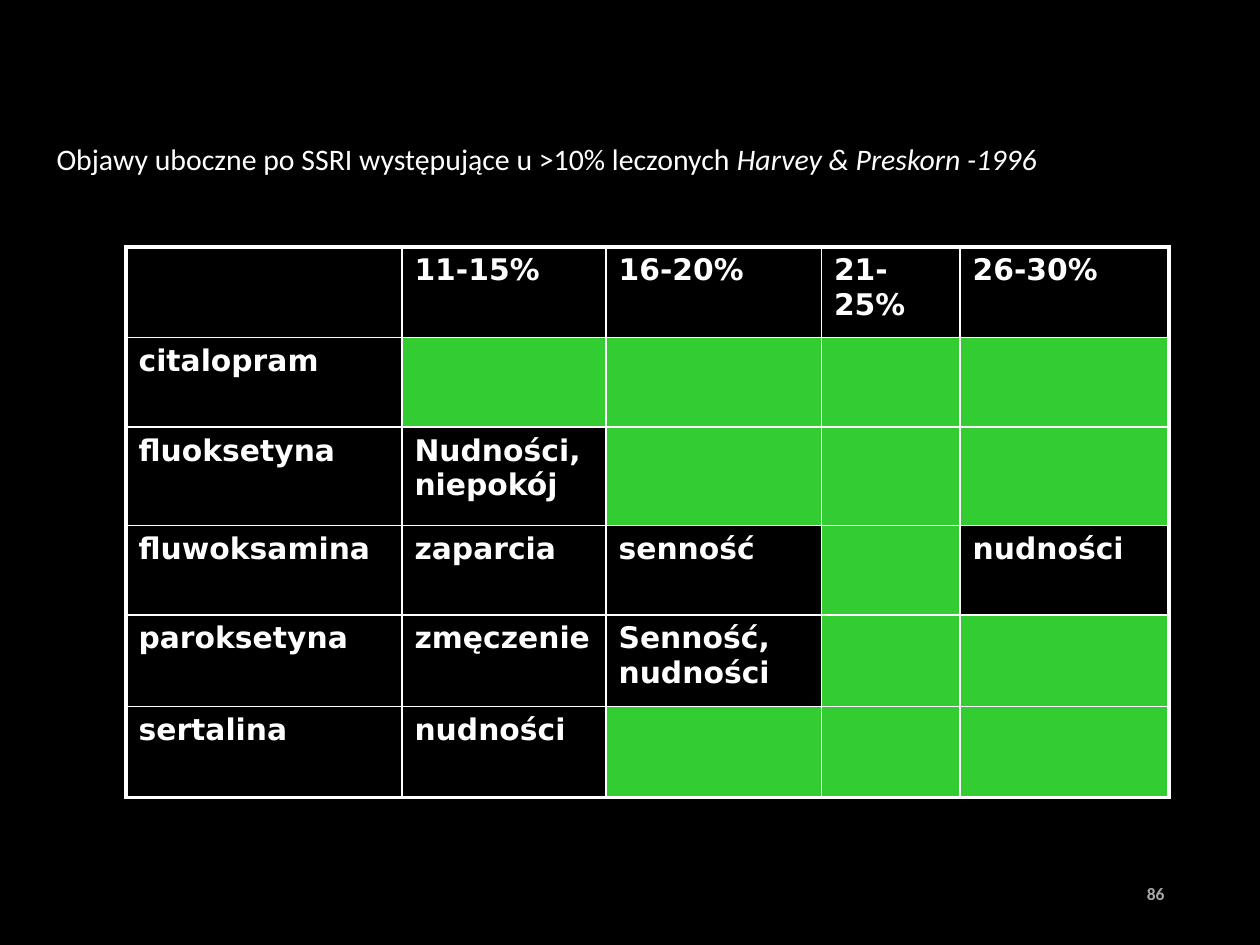
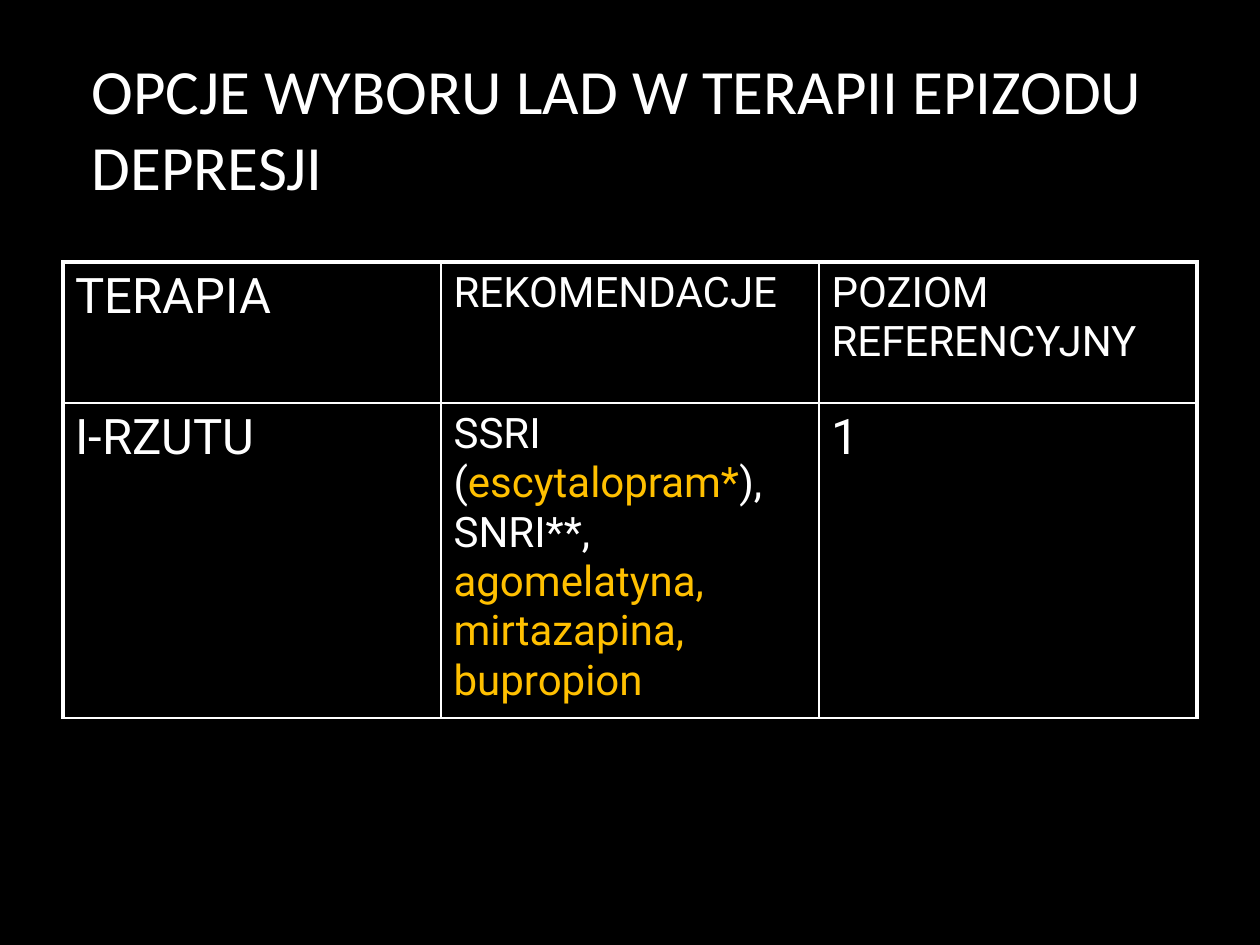
import pptx
import pptx.dml.color
import pptx.enum.text
import pptx.util
from dataclasses import dataclass
from lxml import etree
from pptx.oxml.ns import qn

Inches = pptx.util.Inches
Pt = pptx.util.Pt


@dataclass(frozen=True)
class Theme:
    background: str = "000000"
    text: str = "FFFFFF"
    accent: str = "FFC000"
    empty_cell: str = "33CC33"
    title_font: str = "Calibri"
    symptom_font: str = "DejaVu Sans"
    therapy_font: str = "Roboto"
    small: int = 10
    body: int = 17
    medium: int = 24
    large: int = 28
    heading: int = 36
    outer_line: float = 2.25
    inner_line: float = 1


THEME = Theme()
ANCHOR = pptx.enum.text.MSO_ANCHOR

# Content: each text is a list of (text, run style)
SYMPTOM_TITLE = [
    ("Objawy uboczne po SSRI występujące u >10% leczonych ", {}),
    ("Harvey & Preskorn -1996", {"italic": True}),
]
SYMPTOM_ROWS = [
    ["", "11-15%", "16-20%", "21-25%", "26-30%"],
    ["citalopram", "", "", "", ""],
    ["fluoksetyna", "Nudności, niepokój", "", "", ""],
    ["fluwoksamina", "zaparcia", "senność", "", "nudności"],
    ["paroksetyna", "zmęczenie", "Senność, nudności", "", ""],
    ["sertalina", "nudności", "", "", ""],
]
SYMPTOM_WIDTHS = [2.19, 1.62, 1.71, 1.1, 1.66]
SYMPTOM_HEIGHTS = [0.72, 0.71, 0.78, 0.71, 0.73, 0.72]
PAGE_NUMBER = "86"

THERAPY_TITLE = [("OPCJE WYBORU LAD W TERAPII EPIZODU DEPRESJI", {})]
LARGE = {"size": THEME.large}
ACCENT = {"color": THEME.accent}
THERAPY_ROWS = [
    [[("TERAPIA", LARGE)], [("REKOMENDACJE", {})], [("POZIOM REFERENCYJNY", {})]],
    [
        [("I-RZUTU", LARGE)],
        [
            ("SSRI (", {}),
            ("escytalopram*", ACCENT),
            ("), SNRI**, ", {}),
            ("agomelatyna, mirtazapina, bupropion", ACCENT),
        ],
        [("1", LARGE)],
    ],
]
THERAPY_WIDTHS = [3, 3, 3]
THERAPY_HEIGHTS = [1.12, 2.45]


def rgb(value):
    return pptx.dml.color.RGBColor.from_string(value)


def write(paragraph, runs, **base):
    """Add runs, each with the base style and its own changes."""
    for text, changes in runs:
        style = {"color": THEME.text, **base, **changes}
        run = paragraph.add_run()
        run.text = text
        font = run.font
        font.name = style["font"]
        font.size = Pt(style["size"])
        font.bold = style.get("bold", False)
        font.italic = style.get("italic", False)
        font.color.rgb = rgb(style["color"])


def add_text(slide, box, runs, anchor, **style):
    frame = slide.shapes.add_textbox(*map(Inches, box)).text_frame
    frame.word_wrap = True
    frame.vertical_anchor = anchor
    write(frame.paragraphs[0], runs, **style)
    return frame.paragraphs[0]


def add_title(slide, box, runs, size):
    add_text(slide, box, runs, ANCHOR.BOTTOM, font=THEME.title_font, size=size)


def set_borders(cell, outer_sides):
    properties = cell._tc.get_or_add_tcPr()
    for side in "LRTB":
        width = THEME.outer_line if side in outer_sides else THEME.inner_line
        line = etree.SubElement(properties, qn(f"a:ln{side}"), w=str(int(Pt(width))))
        fill = etree.SubElement(line, qn("a:solidFill"))
        etree.SubElement(fill, qn("a:srgbClr"), val=THEME.text)


def add_grid(slide, left, top, widths, heights, rows, thick_sides="LRTB",
             empty_fill=None, **style):
    table = slide.shapes.add_table(
        len(heights), len(widths), Inches(left), Inches(top),
        Inches(sum(widths)), Inches(sum(heights))).table
    table.first_row = table.horz_banding = False
    for column, width in zip(table.columns, widths):
        column.width = Inches(width)
    for row, height in zip(table.rows, heights):
        row.height = Inches(height)

    last_row, last_column = len(heights) - 1, len(widths) - 1
    for r, row in enumerate(rows):
        for c, content in enumerate(row):
            cell = table.cell(r, c)
            at_edge = {"L": c == 0, "R": c == last_column,
                       "T": r == 0, "B": r == last_row}
            set_borders(cell, [side for side in thick_sides if at_edge[side]])
            if content:
                runs = [(content, {})] if isinstance(content, str) else content
                write(cell.text_frame.paragraphs[0], runs, **style)
            if empty_fill and not content and r > 0:
                cell.fill.solid()
                cell.fill.fore_color.rgb = rgb(empty_fill)
            else:
                cell.fill.background()


def add_page_number(slide, number):
    paragraph = add_text(slide, (7.17, 6.83, 2.17, 0.52), [(number, {})], ANCHOR.MIDDLE,
                         font=THEME.title_font, size=THEME.small, bold=True)
    paragraph.alignment = pptx.enum.text.PP_ALIGN.RIGHT
    for color in paragraph._p.iter(qn("a:srgbClr")):
        etree.SubElement(color, qn("a:alpha"), val="65000")


def new_slide(deck):
    slide = deck.slides.add_slide(deck.slide_layouts[6])
    slide.background.fill.solid()
    slide.background.fill.fore_color.rgb = rgb(THEME.background)
    return slide


def main():
    deck = pptx.Presentation()
    deck.slide_width, deck.slide_height = Inches(10), Inches(7.5)

    # Side effects by frequency
    symptoms = new_slide(deck)
    add_title(symptoms, (0.35, 0.68, 9.45, 0.77), SYMPTOM_TITLE, THEME.body)
    add_grid(symptoms, 1, 1.96, SYMPTOM_WIDTHS, SYMPTOM_HEIGHTS, SYMPTOM_ROWS,
             empty_fill=THEME.empty_cell, font=THEME.symptom_font,
             size=THEME.body, bold=True)
    add_page_number(symptoms, PAGE_NUMBER)

    # Treatment options
    therapy = new_slide(deck)
    add_title(therapy, (0.63, 0.33, 8.75, 1.33), THERAPY_TITLE, THEME.heading)
    add_grid(therapy, 0.5, 2.08, THERAPY_WIDTHS, THERAPY_HEIGHTS, THERAPY_ROWS,
             thick_sides="LRT", font=THEME.therapy_font, size=THEME.medium)

    deck.save("out.pptx")


if __name__ == "__main__":
    main()
